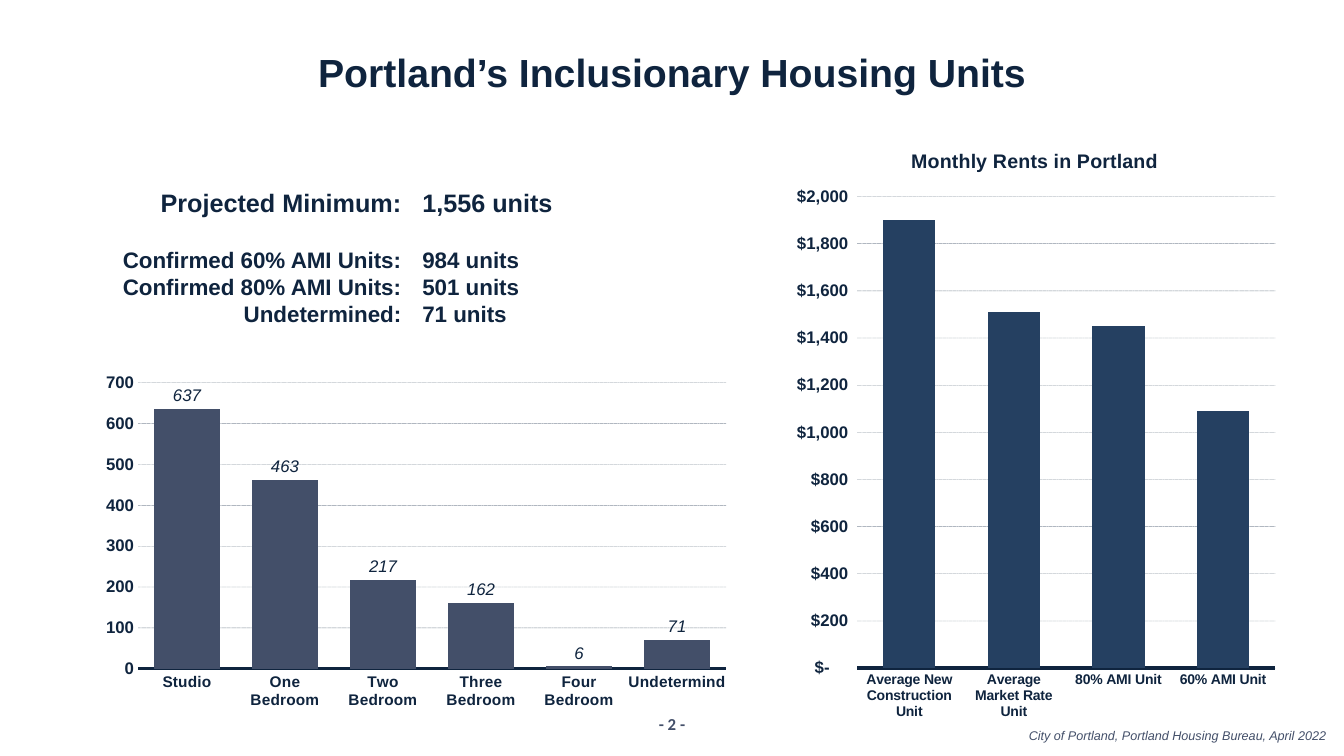
from lxml import etree
from pptx import Presentation
from pptx.chart.data import CategoryChartData
from pptx.dml.color import RGBColor
from pptx.enum.chart import XL_CHART_TYPE, XL_LABEL_POSITION, XL_TICK_MARK
from pptx.enum.dml import MSO_LINE_DASH_STYLE as DashStyle
from pptx.enum.text import MSO_ANCHOR, MSO_AUTO_SIZE, PP_ALIGN
from pptx.oxml import parse_xml
from pptx.oxml.ns import nsdecls, qn
from pptx.util import Inches, Pt

COLORS = {"navy": "0F243E", "slate": "434F69", "blue": "254061"}
RENT_FORMAT = '_("$"* #,##0_);_("$"* \\(#,##0\\);_("$"* "-"??_);_(@_)'


def style_font(font, size, color, bold=False, italic=False, name="Arial"):
    font.name = name
    font.size = Pt(size)
    font.bold = bold
    font.italic = italic
    font.color.rgb = RGBColor.from_string(COLORS[color])


def set_layout(parent, position, sizes):
    for old_layout in parent.findall(qn("c:layout")):
        parent.remove(old_layout)
    layout = parse_xml(f'<c:layout {nsdecls("c")}><c:manualLayout/></c:layout>')
    manual = layout[0]
    settings = [("xMode", "edge"), ("yMode", "edge"), *zip("xywh", position)]
    if sizes:
        settings.insert(0, ("layoutTarget", "inner"))
    for tag, value in settings:
        etree.SubElement(manual, qn(f"c:{tag}")).set("val", str(value))
    parent.insert(1 if parent.tag == qn("c:title") else 0, layout)


presentation = Presentation()
presentation.slide_width = Inches(13.33)
presentation.slide_height = Inches(7.5)
slide = presentation.slides.add_slide(presentation.slide_layouts[5])

title = slide.shapes.title
title.left, title.top = Inches(0.75), Inches(0.48)
title.width, title.height = Inches(11.83), Inches(0.47)
frame = title.text_frame
frame.margin_left = frame.margin_right = frame.margin_top = frame.margin_bottom = 0
frame.auto_size = MSO_AUTO_SIZE.NONE
frame.vertical_anchor = MSO_ANCHOR.MIDDLE
paragraph = frame.paragraphs[0]
paragraph.alignment = PP_ALIGN.CENTER
run = paragraph.add_run()
run.text = "Portland’s Inclusionary Housing Units"
style_font(run.font, 28, "navy", bold=True)

unit_columns = [
    (0.75, 3.33, PP_ALIGN.RIGHT, ["Projected Minimum:", "Confirmed 60% AMI Units:",
                                  "Confirmed 80% AMI Units:", "Undetermined:"]),
    (4.09, 1.5, PP_ALIGN.LEFT, ["1,556 units", "984 units", "501 units", "71 units"]),
]
unit_group = slide.shapes.add_group_shape()
for left, width, alignment, lines in unit_columns:
    box = unit_group.shapes.add_textbox(Inches(left), Inches(1.81), Inches(width), Inches(1.82))
    frame = box.text_frame
    frame.word_wrap = True
    for index, line in enumerate(lines):
        paragraph = frame.add_paragraph() if index else frame.paragraphs[0]
        paragraph.alignment = alignment
        if index == 1:
            paragraph.space_before = Pt(20.7)
        run = paragraph.add_run()
        run.text = line
        style_font(run.font, 16 if index else 18, "navy", bold=True)

charts = [
    {"place": (0.92, 3.65, 6.41, 3.46), "plot": (0.07, 0.043, 0.91, 0.82),
     "categories": ["Studio", "One\nBedroom", "Two\nBedroom", "Three\nBedroom",
                    "Four\nBedroom", "Undetermind"],
     "values": [637, 463, 217, 162, 6, 71], "color": "slate", "gap": 50, "overlap": 0,
     "maximum": 700, "step": 100, "format": "General", "category_size": 11,
     "axis_width": 2.5, "title": None},
    {"place": (7.75, 1.23, 5, 6), "plot": (0.15, 0.12, 0.83, 0.78),
     "categories": ["Average New\nConstruction\nUnit", "Average\nMarket Rate\nUnit",
                    "80% AMI Unit", "60% AMI Unit"],
     "values": [1900, 1510, 1450, 1090], "color": "blue", "gap": 100, "overlap": -25,
     "maximum": 2000, "step": 200, "format": RENT_FORMAT, "category_size": 10,
     "axis_width": 3, "title": "Monthly Rents in Portland"},
]
for settings in charts:
    data = CategoryChartData()
    data.categories = settings["categories"]
    data.add_series("Series 1", settings["values"])
    place = [Inches(length) for length in settings["place"]]
    chart = slide.shapes.add_chart(XL_CHART_TYPE.COLUMN_CLUSTERED, *place, data).chart
    style_font(chart.font, 10, "navy", bold=True)
    chart.has_legend = False
    chart.has_title = settings["title"] is not None

    plot = chart.plots[0]
    plot.vary_by_categories = False
    plot.gap_width = settings["gap"]
    plot.overlap = settings["overlap"]
    fill = plot.series[0].format.fill
    fill.solid()
    fill.fore_color.rgb = RGBColor.from_string(COLORS[settings["color"]])

    category_axis = chart.category_axis
    category_axis.major_tick_mark = XL_TICK_MARK.NONE
    category_axis.format.line.color.rgb = RGBColor.from_string(COLORS["navy"])
    category_axis.format.line.width = Pt(settings["axis_width"])
    style_font(category_axis.tick_labels.font, settings["category_size"], "navy", bold=True)

    value_axis = chart.value_axis
    value_axis.minimum_scale = 0
    value_axis.maximum_scale = settings["maximum"]
    value_axis.major_unit = settings["step"]
    value_axis.major_tick_mark = XL_TICK_MARK.NONE
    value_axis.format.line.fill.background()
    style_font(value_axis.tick_labels.font, 12, "navy", bold=True)
    value_axis.tick_labels.number_format = settings["format"]
    value_axis.tick_labels.number_format_is_linked = False
    grid_line = value_axis.major_gridlines.format.line
    grid_line.color.rgb = RGBColor.from_string(COLORS["navy"])
    grid_line.width = Pt(0.25)
    grid_line.dash_style = DashStyle.SQUARE_DOT
    grid_color = value_axis.major_gridlines._xAx.find(".//" + qn("c:majorGridlines")).find(
        ".//" + qn("a:srgbClr"))
    etree.SubElement(grid_color, qn("a:alpha")).set("val", "50000")

    set_layout(plot._element.getparent(), settings["plot"], True)
    if settings["title"]:
        run = chart.chart_title.text_frame.paragraphs[0].add_run()
        run.text = settings["title"]
        style_font(run.font, 14, "navy", bold=True)
        set_layout(chart.chart_title._element, (0.25, 0.035), False)
    else:
        labels = plot.series[0].data_labels
        labels.show_value = True
        labels.position = XL_LABEL_POSITION.OUTSIDE_END
        style_font(labels.font, 12, "navy", italic=True)

footers = [
    ((9.6, 7.17, 3.65, 0.25), "City of Portland, Portland Housing Bureau, April 2022",
     PP_ALIGN.RIGHT, 9, "Arial", False),
    ((6.22, 7.08, 0.89, 0.2), "- 2 -", PP_ALIGN.CENTER, 12, "Calibri", True),
]
for place, text, alignment, size, font_name, is_page_number in footers:
    box = slide.shapes.add_textbox(*[Inches(length) for length in place])
    frame = box.text_frame
    frame.word_wrap = True
    if is_page_number:
        frame.margin_left = frame.margin_right = frame.margin_top = frame.margin_bottom = 0
    paragraph = frame.paragraphs[0]
    paragraph.alignment = alignment
    run = paragraph.add_run()
    run.text = text
    style_font(run.font, size, "slate", bold=is_page_number,
               italic=not is_page_number, name=font_name)

presentation.save("out.pptx")
